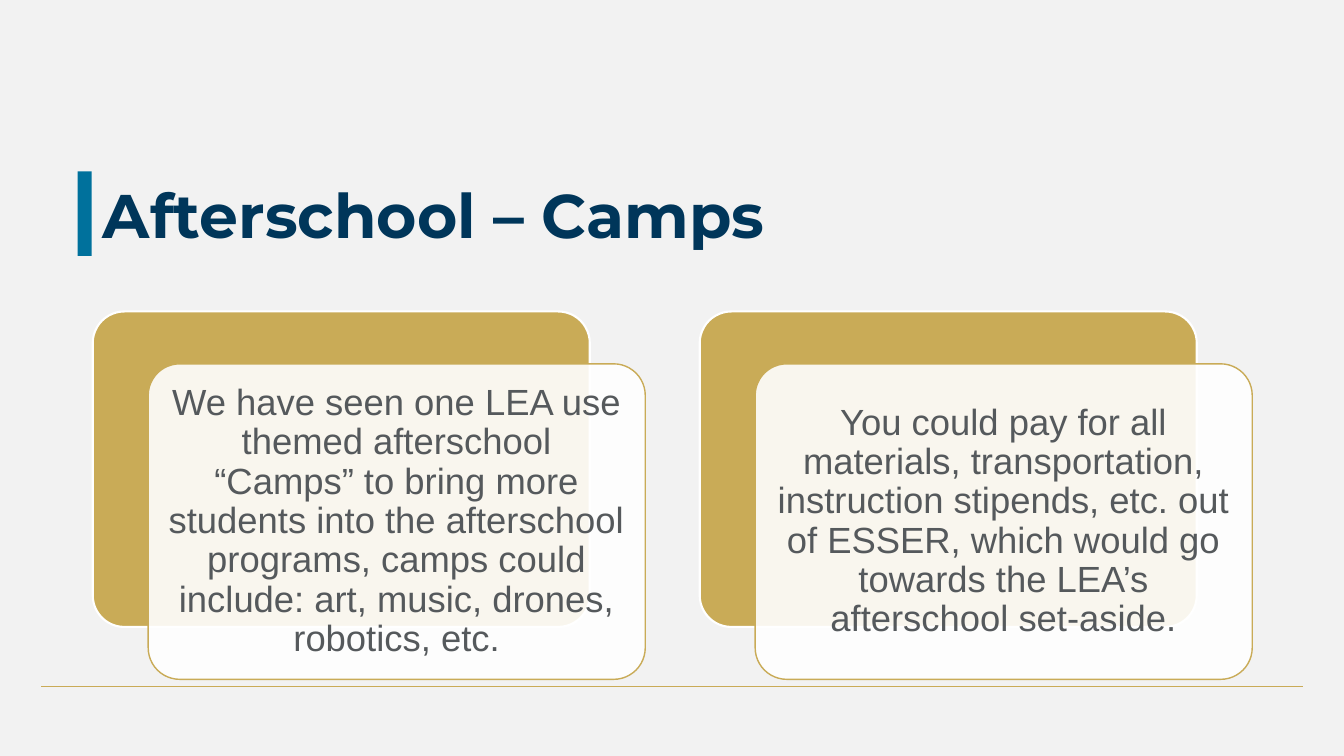
from dataclasses import dataclass

from lxml import etree
from pptx import Presentation
from pptx.dml.color import RGBColor
from pptx.enum.shapes import MSO_CONNECTOR, MSO_SHAPE
from pptx.enum.text import MSO_ANCHOR, PP_ALIGN
from pptx.oxml.ns import qn
from pptx.util import Inches, Pt

RECTANGLE = MSO_SHAPE.RECTANGLE
ROUNDED = MSO_SHAPE.ROUNDED_RECTANGLE
STRAIGHT = MSO_CONNECTOR.STRAIGHT
MIDDLE = MSO_ANCHOR.MIDDLE
LEFT, CENTER = PP_ALIGN.LEFT, PP_ALIGN.CENTER

# Content
TITLE = "Afterschool – Camps"
CARDS = [
    "We have seen one LEA use themed afterschool “Camps” to bring more students "
    "into the afterschool programs, camps could include: art, music, drones, "
    "robotics, etc.",
    "You could pay for all materials, transportation, instruction stipends, etc. "
    "out of ESSER, which would go towards the LEA’s afterschool set-aside.",
]


@dataclass(frozen=True)
class Theme:
    background: str = "F2F2F2"
    navy: str = "00365A"
    teal: str = "00719C"
    gold: str = "C9AB57"
    rule: str = "CAAB57"
    white: str = "FFFFFF"
    gray: str = "55595C"
    title_font: str = "Montserrat"
    body_font: str = "Arial"
    title_size: int = 44
    body_size: int = 26


THEME = Theme()

# Layout in inches
CARD_LEFT, CARD_TOP, CARD_PITCH = 0.92, 3.09, 6.02
CARD_WIDTH, CARD_HEIGHT = 4.93, 3.13
FRONT_RIGHT, FRONT_DOWN = 0.55, 0.52
TEXT_INSET, TEXT_MARGIN = 0.09, 0.11


def color(code):
    return RGBColor.from_string(code)


def add_panel(page, kind, area, fill, line=None, line_width=1):
    panel = page.shapes.add_shape(kind, *map(Inches, area))
    panel.shadow.inherit = False
    panel.fill.solid()
    panel.fill.fore_color.rgb = color(fill)
    if line:
        panel.line.color.rgb = color(line)
        panel.line.width = Pt(line_width)
    else:
        panel.line.fill.background()
    if kind == ROUNDED:
        panel.adjustments[0] = 0.1
    return panel


def set_opacity(panel, percent):
    fill_color = panel.fill._xPr.find(qn("a:solidFill"))[0]
    etree.SubElement(fill_color, qn("a:alpha"), val=str(percent * 1000))


def write(frame, text, font, size, ink, align, bold=False):
    frame.word_wrap = True
    frame.vertical_anchor = MIDDLE
    para = frame.paragraphs[0]
    para.text = text
    para.alignment = align
    para.line_spacing = 0.9
    para.font.name = font
    para.font.size = Pt(size)
    para.font.bold = bold
    para.font.color.rgb = color(ink)


def add_card(page, left, text):
    add_panel(page, ROUNDED, (left, CARD_TOP, CARD_WIDTH, CARD_HEIGHT),
              THEME.gold, THEME.white, 1.5)
    front_left, front_top = left + FRONT_RIGHT, CARD_TOP + FRONT_DOWN
    front = add_panel(page, ROUNDED, (front_left, front_top, CARD_WIDTH, CARD_HEIGHT),
                      THEME.white, THEME.gold)
    set_opacity(front, 90)
    area = (front_left + TEXT_INSET, front_top + TEXT_INSET,
            CARD_WIDTH - 2 * TEXT_INSET, CARD_HEIGHT - 2 * TEXT_INSET)
    frame = page.shapes.add_textbox(*map(Inches, area)).text_frame
    frame.margin_left = frame.margin_right = Inches(TEXT_MARGIN)
    frame.margin_top = frame.margin_bottom = Inches(TEXT_MARGIN)
    write(frame, text, THEME.body_font, THEME.body_size, THEME.gray, CENTER)


def main():
    deck = Presentation()
    deck.slide_width, deck.slide_height = Inches(13.33), Inches(7.5)
    page = deck.slides.add_slide(deck.slide_layouts[5])
    page.background.fill.solid()
    page.background.fill.fore_color.rgb = color(THEME.background)

    # Footer rule and title accent
    rule = page.shapes.add_connector(STRAIGHT, *map(Inches, (0.41, 6.81, 12.92, 6.81)))
    rule.line.color.rgb = color(THEME.rule)
    rule.line.width = Pt(1)
    etree.SubElement(rule._element.spPr, qn("a:effectLst"))
    add_panel(page, RECTANGLE, (0.77, 1.7, 0.14, 0.84), THEME.teal)

    # Title
    title = page.shapes.title
    title.left, title.top, title.width, title.height = map(Inches, (0.92, 1.44, 11.5, 1.45))
    write(title.text_frame, TITLE, THEME.title_font, THEME.title_size, THEME.navy,
          LEFT, bold=True)

    # Cards
    for index, text in enumerate(CARDS):
        add_card(page, CARD_LEFT + index * CARD_PITCH, text)

    deck.save("out.pptx")


if __name__ == "__main__":
    main()
